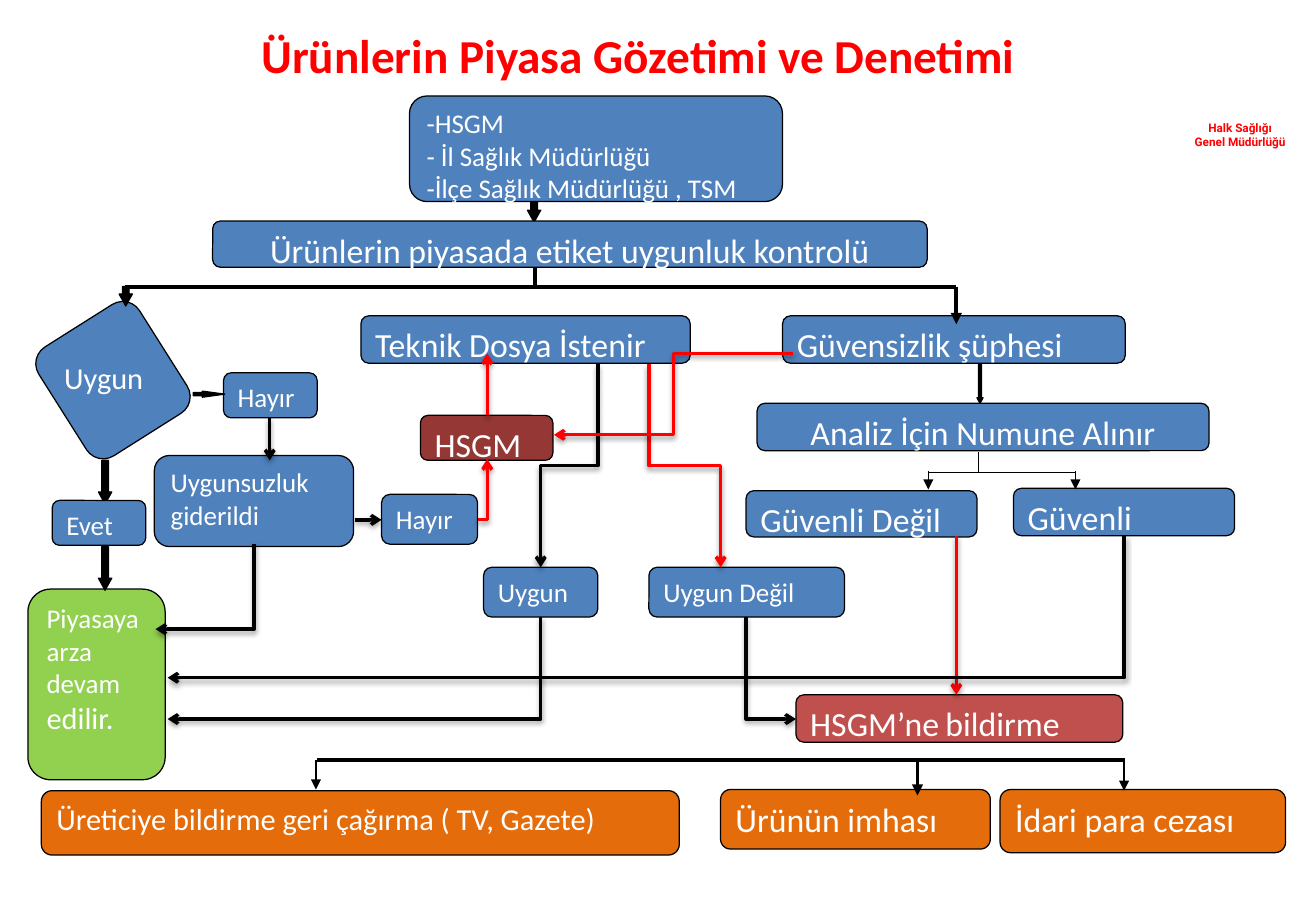
from lxml import etree
from pptx import Presentation
from pptx.dml.color import RGBColor
from pptx.enum.shapes import MSO_CONNECTOR, MSO_SHAPE
from pptx.enum.text import MSO_ANCHOR, PP_ALIGN
from pptx.oxml.ns import qn
from pptx.util import Inches, Pt

LEFT, CENTER = PP_ALIGN.LEFT, PP_ALIGN.CENTER
TOP = MSO_ANCHOR.TOP
ROUNDED, RECTANGLE = MSO_SHAPE.ROUNDED_RECTANGLE, MSO_SHAPE.RECTANGLE
DOWN, RIGHT = MSO_SHAPE.DOWN_ARROW, MSO_SHAPE.RIGHT_ARROW
STRAIGHT, ELBOW = MSO_CONNECTOR.STRAIGHT, MSO_CONNECTOR.ELBOW

COLORS = {
    "white": "FFFFFF", "black": "000000", "red": "FF0000", "blue": "4F81BD",
    "green": "92D050", "brick": "C0504D", "maroon": "953735", "orange": "E46C0A",
}


def color_of(name):
    return RGBColor.from_string(COLORS[name])


def write(frame, text, size=16, color="white", font="Calibri", bold=False,
          align=LEFT, after=0):
    """Fill a frame; text is a string with line breaks or a list of (text, size) spans."""
    frame.word_wrap = True
    frame.vertical_anchor = TOP
    if isinstance(text, str):
        lines = [[(line, size)] for line in text.split("\n")]
    else:
        lines = [text]
    for index, line in enumerate(lines):
        para = frame.add_paragraph() if index else frame.paragraphs[0]
        para.alignment = align
        para.space_after = Pt(after)
        for words, points in line:
            span = para.add_run()
            span.text = words
            span.font.size = Pt(points)
            span.font.name = font
            span.font.bold = bold
            span.font.color.rgb = color_of(color)


class FlowChart:
    def __init__(self, page, line_width=0.75, arrow_width=2):
        self.page = page
        self.line_width = line_width
        self.arrow_width = arrow_width

    def shape(self, kind, place, fill, border="black"):
        shape = self.page.shapes.add_shape(kind, *map(Inches, place))
        shape.shadow.inherit = False
        shape.fill.solid()
        shape.fill.fore_color.rgb = color_of(fill)
        if border:
            shape.line.color.rgb = color_of(border)
            shape.line.width = Pt(self.line_width)
        else:
            shape.line.fill.background()
        return shape

    def box(self, place, text, fill="blue", after=10, **style):
        box = self.shape(ROUNDED, place, fill)
        write(box.text_frame, text, after=after, **style)

    def label(self, place, text, **style):
        label = self.page.shapes.add_textbox(*map(Inches, place))
        write(label.text_frame, text, **style)

    def block_arrow(self, place, kind=DOWN, head=0.9):
        arrow = self.shape(kind, place, "black")
        arrow.adjustments[1] = head

    def connector(self, kind, start, end, color, width, head, shadow):
        line = self.page.shapes.add_connector(kind, *map(Inches, start + end))
        line.line.color.rgb = color_of(color)
        line.line.width = Pt(width)
        properties = line._element.spPr
        if head:
            etree.SubElement(properties.find(qn("a:ln")), qn("a:tailEnd"), type=head)
        effects = etree.SubElement(properties, qn("a:effectLst"))
        if shadow:
            outer = etree.SubElement(effects, qn("a:outerShdw"), blurRad="40000",
                                     dist="20000", dir="5400000", rotWithShape="0")
            tint = etree.SubElement(outer, qn("a:srgbClr"), val=COLORS["black"])
            etree.SubElement(tint, qn("a:alpha"), val="38000")
        return properties

    def line(self, start, end, width=2.25, head=None):
        self.connector(STRAIGHT, start, end, "black", width, head, False)

    def arrow(self, start, end, color="black"):
        self.connector(STRAIGHT, start, end, color, self.arrow_width, "arrow", True)

    def elbow(self, start, end, color="black", turns=1, downward=True):
        """Bent arrow; a downward one is laid out sideways and turned by 90 degrees."""
        if downward:
            (x1, y1), (x2, y2) = start, end
            middle_x, middle_y = (x1 + x2) / 2, (y1 + y2) / 2
            half_x, half_y = (x2 - x1) / 2, (y2 - y1) / 2
            start = (middle_x - half_y, middle_y + half_x)
            end = (middle_x + half_y, middle_y - half_x)
        properties = self.connector(ELBOW, start, end, color, self.arrow_width,
                                    "arrow", True)
        if downward:
            properties.find(qn("a:xfrm")).set("rot", "5400000")
        properties.find(qn("a:prstGeom")).set("prst", f"bentConnector{turns + 1}")


def main():
    deck = Presentation()
    deck.slide_width, deck.slide_height = Inches(10.83), Inches(7.5)
    chart = FlowChart(deck.slides.add_slide(deck.slide_layouts[6]))

    # Heading and agency name
    agency = chart.shape(RECTANGLE, (9.64, 0.99, 1.13, 0.24), "white", border=None)
    frame = agency.text_frame
    frame.margin_left = frame.margin_right = frame.margin_top = frame.margin_bottom = 0
    write(frame, "Halk Sağlığı\nGenel Müdürlüğü", size=7, color="red",
          font="Roboto", bold=True, align=CENTER)
    chart.label((1.24, 0.17, 8.02, 0.57), "Ürünlerin Piyasa Gözetimi ve Denetimi",
                size=28, color="red", bold=True, align=CENTER)

    # Block arrows partly covered by boxes
    for place in ((4.34, 1.47, 0.11, 0.36), (0.81, 3.79, 0.11, 0.36)):
        chart.block_arrow(place)

    # Authorities and label check
    chart.box((3.37, 0.79, 3.07, 0.87),
              "-HSGM\n- İl Sağlık Müdürlüğü\n-İlçe Sağlık Müdürlüğü , TSM", after=0)
    chart.box((1.75, 1.82, 5.88, 0.38), "Ürünlerin piyasada etiket uygunluk kontrolü",
              size=20, align=CENTER)

    # Decision on conformity
    decision = chart.shape(ROUNDED, (0.4, 2.64, 1.06, 0.98), "blue")
    decision.rotation = 57.7
    chart.label((0.43, 2.91, 0.89, 0.4), "Uygun", size=18)

    # Small steps
    for place, text in (
        ((1.27, 3.75, 1.64, 0.75), "Uygunsuzluk giderildi"),
        ((1.84, 3.07, 0.77, 0.37), "Hayır"),
        ((3.14, 4.07, 0.79, 0.41), "Hayır"),
        ((0.43, 4.12, 0.77, 0.37), "Evet"),
        ((3.98, 4.67, 0.94, 0.41), "Uygun"),
        ((5.34, 4.67, 1.61, 0.41), "Uygun Değil"),
    ):
        chart.box(place, text)

    # Large steps
    for place, text, fill, align in (
        ((2.97, 2.6, 2.71, 0.39), "Teknik Dosya İstenir", "blue", LEFT),
        ((6.44, 2.6, 2.82, 0.39), "Güvensizlik şüphesi", "blue", LEFT),
        ((6.23, 3.32, 3.72, 0.39), "Analiz İçin Numune Alınır", "blue", CENTER),
        ((6.14, 4.04, 1.9, 0.38), "Güvenli Değil", "blue", LEFT),
        ((8.34, 4.02, 1.82, 0.39), "Güvenli", "blue", LEFT),
        ((3.46, 3.42, 1.09, 0.37), "HSGM", "maroon", LEFT),
        ((5.93, 6.5, 2.22, 0.49), "Ürünün imhası", "orange", LEFT),
        ((8.23, 6.5, 2.35, 0.52), "İdari para cezası", "orange", LEFT),
    ):
        chart.box(place, text, fill, size=20, align=align)

    # Outcomes with other text sizes
    chart.box((0.34, 6.51, 5.25, 0.53),
              "Üreticiye bildirme geri çağırma ( TV, Gazete)", "orange", size=18)
    chart.box((0.23, 4.85, 1.13, 1.57),
              [("Piyasaya arza devam ", 16), ("edilir.", 18)], "green")
    chart.box((6.55, 5.72, 2.69, 0.39),
              [("HSGM’ne", 20), (" ", 16), ("bildirme", 20)], "brick")

    # Block arrows in front
    chart.block_arrow((0.81, 4.5, 0.11, 0.36))
    chart.block_arrow((0.98, 2.36, 0.11, 0.16))
    chart.block_arrow((8.04, 3, 0.05, 0.32))
    chart.block_arrow((1.59, 3.22, 0.26, 0.05), RIGHT, head=3.68)

    # Branch below the label check
    chart.line((4.4, 2.2), (4.4, 2.38))
    chart.line((1.03, 2.36), (7.87, 2.36))
    chart.line((7.87, 2.36), (7.87, 2.67), head="triangle")

    # Branch below the sample analysis
    chart.line((8.05, 3.72), (8.05, 3.89), 0.75)
    chart.line((7.64, 3.89), (8.85, 3.89), 0.75)
    for x in (7.64, 8.85):
        chart.line((x, 3.88), (x, 4.03), 0.75, "triangle")

    # Branch to the sanctions
    chart.line((2.61, 6.26), (9.26, 6.26))
    for x, bottom, width in ((2.6, 6.5, 0.75), (7.55, 6.55, 2.25), (9.25, 6.51, 0.75)):
        chart.line((x, 6.26), (x, bottom), width, "triangle")

    # Straight flow arrows
    chart.arrow((2.22, 3.44), (2.22, 3.79))
    chart.arrow((2.92, 4.28), (3.14, 4.28))
    chart.arrow((4.01, 3.42), (4.01, 2.91), "red")
    chart.arrow((7.87, 4.41), (7.87, 5.72), "red")

    # Bent flow arrows
    for start, end in (
        ((2.09, 4.48), (1.28, 5.18)),
        ((9.25, 4.41), (1.38, 5.58)),
        ((6.14, 5.08), (6.55, 5.92)),
        ((4.45, 5.08), (1.38, 5.92)),
    ):
        chart.elbow(start, end)
    chart.elbow((4.92, 3), (4.45, 4.67), turns=2)
    chart.elbow((5.34, 3), (5.93, 4.67), "red", turns=2)
    chart.elbow((3.93, 4.28), (4.01, 3.78), "red", downward=False)
    chart.elbow((6.53, 2.91), (4.56, 3.58), "red", turns=2, downward=False)

    deck.save("out.pptx")


if __name__ == "__main__":
    main()
